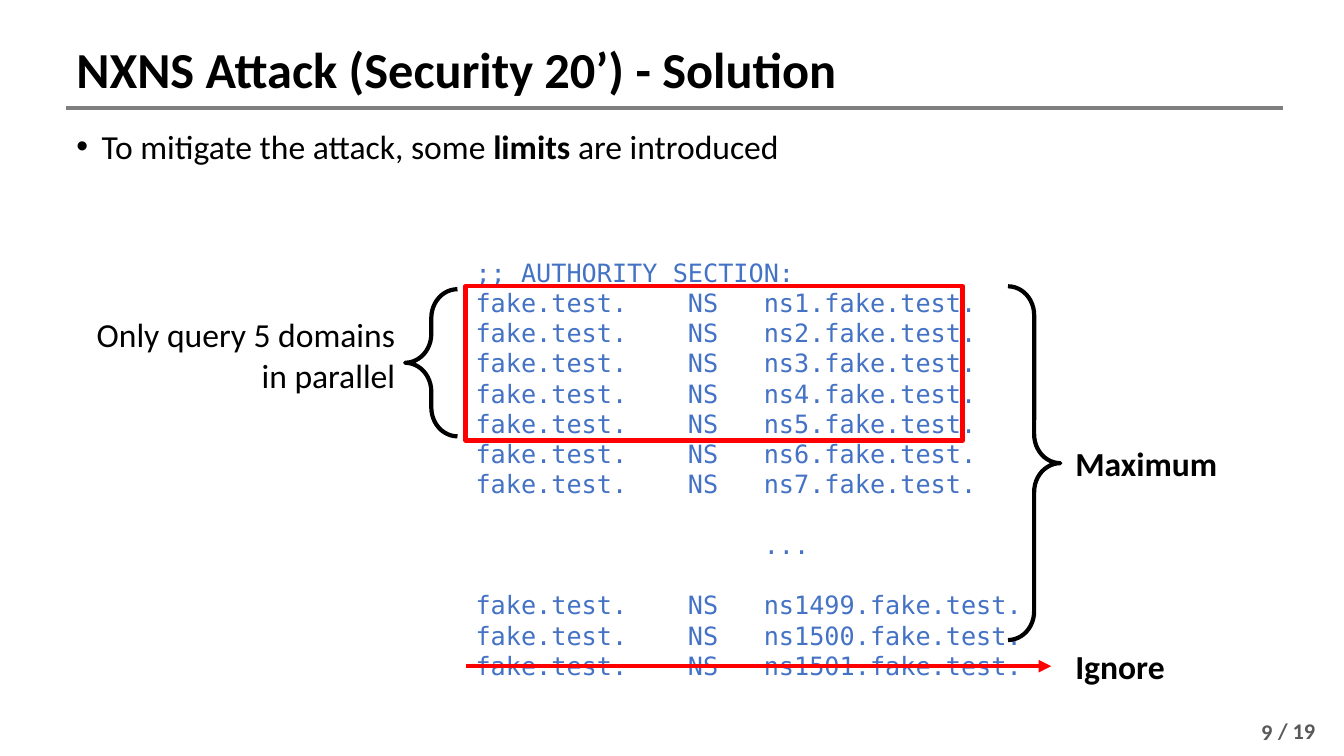
from lxml.etree import SubElement
from pptx import Presentation
from pptx.dml.color import RGBColor
from pptx.enum.shapes import MSO_CONNECTOR as Connector, MSO_SHAPE as Shape
from pptx.enum.text import MSO_ANCHOR as Anchor, PP_ALIGN as Align
from pptx.oxml.ns import qn
from pptx.util import Pt

COLORS = {"black": "000000", "gray": "7F7F7F", "page": "595959",
          "record": "4472C4", "mark": "FF0000"}
SANS, MONO = "Calibri", "DejaVu Sans Mono"
LINE_HEIGHT = 21.6
TAB_STOPS = (151.7, 205.9)


def color(name):
    """Return the named colour of the palette."""
    return RGBColor.from_string(COLORS[name])


def add_run(paragraph, text, size=24, ink="black", bold=False, font=SANS):
    """Append one formatted run to a paragraph."""
    run = paragraph.add_run()
    run.text = text
    run.font.name, run.font.size, run.font.bold = font, Pt(size), bold
    run.font.color.rgb = color(ink)


def add_text_frame(slide, box, wrap=True, anchor=Anchor.TOP):
    """Add a text box and return its frame."""
    frame = slide.shapes.add_textbox(*map(Pt, box)).text_frame
    frame.word_wrap, frame.vertical_anchor = wrap, anchor
    return frame


def add_label(slide, box, text, align=Align.LEFT, **style):
    """Add an unwrapped label whose lines are parted by line breaks."""
    paragraph = add_text_frame(slide, box, wrap=False).paragraphs[0]
    paragraph.alignment = align
    for number, line in enumerate(text.split("\n")):
        if number:
            paragraph.add_line_break()
        add_run(paragraph, line, **style)


def add_line(slide, left, top, length, ink, arrow=False):
    """Add a horizontal line, with an arrowhead if asked."""
    line = slide.shapes.add_connector(
        Connector.STRAIGHT, Pt(left), Pt(top), Pt(left + length), Pt(top))
    line.line.color.rgb, line.line.width = color(ink), Pt(3)
    if arrow:
        SubElement(line.line._get_or_add_ln(), qn("a:tailEnd"), type="triangle")
    SubElement(line._element.spPr, qn("a:effectLst"))


def add_outline(slide, kind, box, ink):
    """Add an unfilled shape with a thick outline."""
    shape = slide.shapes.add_shape(kind, *map(Pt, box))
    shape.shadow.inherit = False
    shape.fill.background()
    shape.line.color.rgb, shape.line.width = color(ink), Pt(3)
    return shape


def add_brace(slide, kind, box):
    """Add a black brace with rounded ends."""
    brace = add_outline(slide, kind, box, "black")
    brace.adjustments[0], brace.adjustments[1] = 0.552, 0.5


def add_header(slide, box):
    """Place the title and the rule under it."""
    left, top, width, height = box
    paragraph = add_text_frame(slide, box, anchor=Anchor.MIDDLE).paragraphs[0]
    paragraph.line_spacing = 0.9
    add_run(paragraph, "NXNS Attack (Security 20’) - Solution", size=36, bold=True)
    add_line(slide, left, top + height, width + 4.3, "gray")


def add_statement(slide, box):
    """Place the bulleted statement."""
    paragraph = add_text_frame(slide, box).paragraphs[0]
    paragraph.line_spacing, paragraph.space_before = 0.9, Pt(10)
    properties = paragraph._p.get_or_add_pPr()
    properties.set("marL", str(Pt(18)))
    properties.set("indent", str(-Pt(18)))
    SubElement(properties, qn("a:buFont"), typeface="Arial")
    SubElement(properties, qn("a:buChar"), char="•")
    add_run(paragraph, "To mitigate the attack, some ")
    add_run(paragraph, "limits ", bold=True)
    add_run(paragraph, "are introduced")


def add_records(slide, box):
    """Place the name server records in tabbed columns."""
    def record(number):
        return f"fake.test.\tNS\tns{number}.fake.test."

    lines = [";; AUTHORITY SECTION:", *map(record, range(1, 8)),
             "\t\t...", *map(record, range(1499, 1502))]
    frame = add_text_frame(slide, box)
    for number, line in enumerate(lines):
        paragraph = frame.add_paragraph() if number else frame.paragraphs[0]
        paragraph.line_spacing = Pt(LINE_HEIGHT)
        if line.endswith("..."):
            paragraph.space_before = paragraph.space_after = Pt(LINE_HEIGHT)
        tabs = SubElement(paragraph._p.get_or_add_pPr(), qn("a:tabLst"))
        for stop in TAB_STOPS:
            SubElement(tabs, qn("a:tab"), pos=str(Pt(stop)), algn="l")
        add_run(paragraph, line, size=18, ink="record", font=MONO)


def add_limits(slide, box):
    """Place the records with the marks and labels of the limits."""
    left, top, width, height = box
    label_left = left + 428.4
    add_records(slide, box)
    add_outline(slide, Shape.RECTANGLE, (left, top + 24.5, 355, 110.2), "mark")
    add_label(slide, (left - 272.9, top + 41, 229.7, 65.5),
              "Only query 5 domains\nin parallel", Align.RIGHT)
    add_brace(slide, Shape.LEFT_BRACE, (left - 43.2, top + 26.6, 37.4, 105.1))
    add_brace(slide, Shape.RIGHT_BRACE, (left + 387.4, top + 24.5, 37.4, 252.7))
    add_label(slide, (label_left, top + 132.5, 116.6, 36), "Maximum", bold=True)
    add_line(slide, left, top + 295.9, width - 0.7, "mark", arrow=True)
    add_label(slide, (label_left, top + 277.9, 79.2, 36), "Ignore", bold=True)


def add_page_number(slide, box):
    """Place the page number and the page total."""
    left, top, width, height = box
    style = {"size": 16, "ink": "page", "bold": True}
    paragraph = add_text_frame(
        slide, (left, top, 38.2, height), anchor=Anchor.MIDDLE).paragraphs[0]
    paragraph.alignment = Align.RIGHT
    add_run(paragraph, "9", **style)
    add_label(slide, (left + 28.1, top + 0.7, width - 28.1, height), "/ 19", **style)


def main():
    """Build and save the slide."""
    presentation = Presentation()
    presentation.slide_width, presentation.slide_height = Pt(960), Pt(540)
    slide = presentation.slides.add_slide(presentation.slide_layouts[6])
    add_header(slide, (47.5, 25.9, 864.7, 51.1))
    add_statement(slide, (47.5, 89.3, 864.7, 108.7))
    add_limits(slide, (332.6, 180, 419, 334.1))
    add_page_number(slide, (877.7, 508.3, 72, 28.8))
    presentation.save("out.pptx")


if __name__ == "__main__":
    main()
